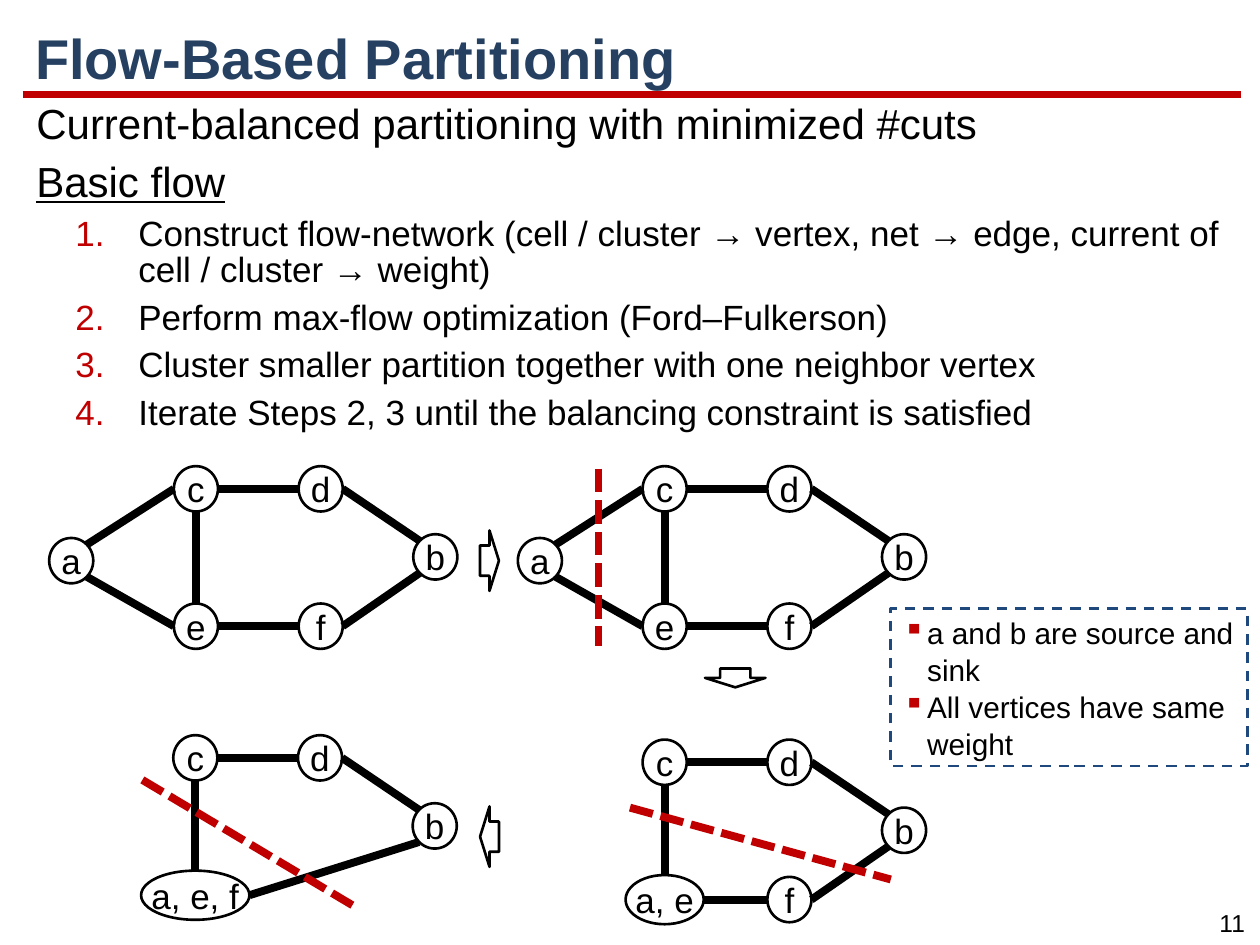
from dataclasses import dataclass

import pptx
import pptx.dml.color
import pptx.enum.dml
import pptx.enum.shapes
import pptx.enum.text
import pptx.oxml
import pptx.oxml.ns
import pptx.util
from lxml import etree

Pt = pptx.util.Pt
Rgb = pptx.dml.color.RGBColor.from_string
Dash = pptx.enum.dml.MSO_LINE
Kind = pptx.enum.shapes.MSO_SHAPE
Align = pptx.enum.text.PP_ALIGN
Anchor = pptx.enum.text.MSO_ANCHOR
qn = pptx.oxml.ns.qn


@dataclass(frozen=True)
class Theme:
    font: str = "Arial"
    ink: str = "000000"
    red: str = "C00000"
    navy: str = "254061"
    blue: str = "1F497D"
    title: int = 32
    lead: int = 24
    step: int = 20
    note: int = 17
    page: int = 14
    thin: float = 1.5
    thick: float = 4.5


@dataclass(frozen=True)
class Node:
    name: str
    col: float
    row: float
    wide: float = 3.5
    high: float = 3.6


@dataclass(frozen=True)
class Edge:
    start: str
    exit: str
    end: str
    entry: str


@dataclass(frozen=True)
class Arrow:
    col: float
    row: float
    turn: int


@dataclass(frozen=True)
class Graph:
    col: float  # centre of node c
    row: float
    nodes: tuple
    edges: tuple
    cut: tuple = ()
    arrow: Arrow | None = None


THEME = Theme()
COLS, ROWS = 100, 75  # square grid cells over the slide

# Points on a node's outline, as shares of its half width and height
DIAG = 0.71
SITES = {"N": (0, -1), "E": (1, 0), "S": (0, 1), "W": (-1, 0),
         "NE": (DIAG, -DIAG), "SE": (DIAG, DIAG),
         "SW": (-DIAG, DIAG), "NW": (-DIAG, -DIAG)}

# Nodes are placed relative to c
A, B = Node("a", -9.9, 5.7), Node("b", 19, 5.4)
C, D = Node("c", 0, 0), Node("d", 9.9, 0)
E, F = Node("e", 0, 10.9), Node("f", 9.9, 10.9)
AE = Node("a, e", 0, 10.9, 6.2, 3.9)
AEF = Node("a, e, f", 0, 10.9, 8.6, 3.9)

TOP = (Edge("d", "W", "c", "E"), Edge("b", "NW", "d", "E"))
LOW = Edge("f", "E", "b", "SW")
FULL = TOP + (LOW, Edge("c", "W", "a", "NE"), Edge("a", "SE", "e", "W"),
              Edge("e", "E", "f", "W"), Edge("e", "N", "c", "S"))

GRAPHS = (
    Graph(15.55, 38.8, (A, C, E, F, D, B), FULL),
    Graph(52.75, 38.8, (A, C, E, F, D, B), FULL,
          (47.5, 37.2, 47.5, 51.3), Arrow(38.85, 44.5, 0)),
    Graph(52.75, 60.5, (C, AE, F, D, B),
          TOP + (LOW, Edge("a, e", "E", "f", "W"), Edge("a, e", "N", "c", "S")),
          (50, 64.1, 70.7, 69.8), Arrow(58.35, 53.8, 90)),
    Graph(15.5, 60.15, (C, AEF, D, B),
          TOP + (Edge("a, e, f", "E", "b", "SW"),
                 Edge("a, e, f", "N", "c", "S")),
          (11.3, 61.9, 28.4, 72.1), Arrow(38.85, 66.4, 180)),
)

LEADS = ("Current-balanced partitioning with minimized #cuts", "Basic flow")
STEPS = (
    "Construct flow-network (cell / cluster → vertex, net → edge, "
    "current of cell / cluster → weight)",
    "Perform max-flow optimization (Ford–Fulkerson)",
    "Cluster smaller partition together with one neighbor vertex",
    "Iterate Steps 2, 3 until the balancing constraint is satisfied",
)
NOTES = ("a and b are source and sink", "All vertices have same weight")


def cell(count: float) -> int:
    return pptx.util.Inches(count * 10 / COLS)


def style(para, size: float, color: str = THEME.ink) -> None:
    para.font.name = THEME.font
    para.font.size = Pt(size)
    para.font.color.rgb = Rgb(color)


def bullet(para, tag: str, attrs: dict, left: float, hang: float) -> None:
    props = para._p.get_or_add_pPr()
    props.set("marL", str(cell(left)))
    props.set("indent", str(-cell(hang)))
    mark = etree.Element(qn("a:buClr"))
    etree.SubElement(mark, qn("a:srgbClr"), val=THEME.red)
    sign = etree.Element(qn(tag), **attrs)
    # Bullets stand after the spacing and before the default run style
    spot = props.index(props.find(qn("a:defRPr")))
    props.insert(spot, mark)
    props.insert(spot + 1, sign)


def line(shapes, ends: tuple, color: str, dash=None):
    rule = shapes.add_connector(pptx.enum.shapes.MSO_CONNECTOR.STRAIGHT,
                                *(cell(end) for end in ends))
    rule.line.color.rgb = Rgb(color)
    rule.line.width = Pt(THEME.thick)
    if dash:
        rule.line.dash_style = dash
    etree.SubElement(rule._element.spPr, qn("a:effectLst"))


def shape(shapes, kind, box: tuple, color: str = THEME.ink):
    item = shapes.add_shape(kind, *(cell(side) for side in box))
    item.shadow.inherit = False
    item.fill.background()
    item.line.color.rgb = Rgb(color)
    item.line.width = Pt(THEME.thin)
    return item


def text(shapes, box: tuple, wrap: bool = True):
    frame = shapes.add_textbox(*(cell(side) for side in box)).text_frame
    frame.word_wrap = wrap
    return frame


def lines(frame, words: tuple):
    frame.text = "\n".join(words)
    return frame.paragraphs


def site(graph: Graph, name: str, side: str) -> tuple:
    node = next(node for node in graph.nodes if node.name == name)
    across, down = SITES[side]
    return (graph.col + node.col + across * node.wide / 2,
            graph.row + node.row + down * node.high / 2)


def draw(slide, graph: Graph) -> None:
    shapes = slide.shapes.add_group_shape().shapes
    for node in graph.nodes:
        item = shape(shapes, Kind.OVAL,
                     (graph.col + node.col - node.wide / 2,
                      graph.row + node.row - node.high / 2,
                      node.wide, node.high))
        frame = item.text_frame
        frame.word_wrap = False
        frame.vertical_anchor = Anchor.MIDDLE
        para, = lines(frame, (node.name,))
        para.alignment = Align.CENTER
        style(para, THEME.step)
    for edge in graph.edges:
        line(shapes, site(graph, edge.start, edge.exit)
             + site(graph, edge.end, edge.entry), THEME.ink)
    if graph.cut:
        line(shapes, graph.cut, THEME.red, Dash.SQUARE_DOT)
    if graph.arrow:
        wide, high = 1.5, 4.8
        item = shape(shapes, Kind.RIGHT_ARROW,
                     (graph.arrow.col - wide / 2, graph.arrow.row - high / 2,
                      wide, high))
        item.rotation = graph.arrow.turn


def main() -> None:
    deck = pptx.Presentation()
    deck.slide_width, deck.slide_height = cell(COLS), cell(ROWS)
    slide = deck.slides.add_slide(deck.slide_layouts[6])
    shapes = slide.shapes

    # Rule, page number and title
    line(shapes, (1.8, 7.5, 98.5, 7.5), THEME.red)
    para, = lines(text(shapes, (95.6, 71.6, 4.4, 3.4), False), ("11",))
    para.alignment = Align.CENTER
    style(para, THEME.page)
    frame = text(shapes, (1.8, 1.6, 96.8, 6.5))
    frame.vertical_anchor = Anchor.MIDDLE
    para, = lines(frame, ("Flow-Based Partitioning",))
    para.line_spacing = 0.9
    style(para, THEME.title, THEME.navy)
    para.font.bold = True

    # Lead lines and numbered steps
    paras = lines(text(shapes, (1.9, 7.9, 96.6, 28.7)), LEADS + STEPS)
    for spot, para in enumerate(paras):
        size = THEME.lead if spot < len(LEADS) else THEME.step
        para.line_spacing = 0.85
        para.space_before = Pt(round(0.345 * size, 1))
        style(para, size)
        if spot >= len(LEADS):
            para.level = 1
            bullet(para, "a:buAutoNum", {"type": "arabicPeriod"}, 8.1, 5)
    paras[1].font.underline = True

    # Partitioning sequence
    for graph in GRAPHS:
        draw(slide, graph)

    # Side note
    note = shape(shapes, Kind.RECTANGLE, (70.7, 48.3, 28.3, 12.5), THEME.blue)
    note.line.dash_style = Dash.DASH
    note.text_frame.word_wrap = True
    note.text_frame.vertical_anchor = Anchor.MIDDLE
    for para in lines(note.text_frame, NOTES):
        para.alignment = Align.LEFT
        para.line_spacing = 1.04
        style(para, THEME.note)
        bullet(para, "a:buChar", {"char": "▪"}, 1.9, 1.9)

    deck.save("out.pptx")


if __name__ == "__main__":
    main()
